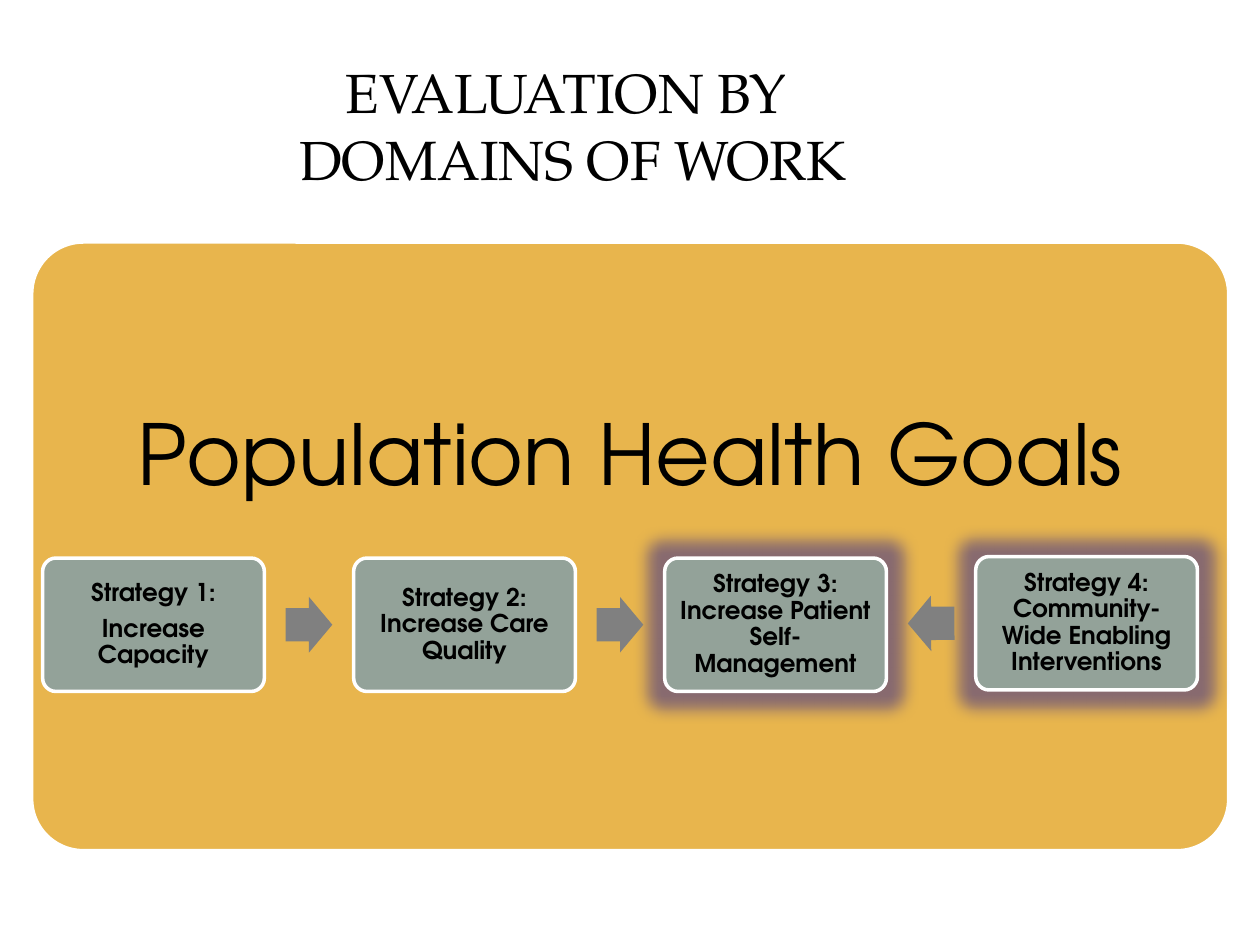
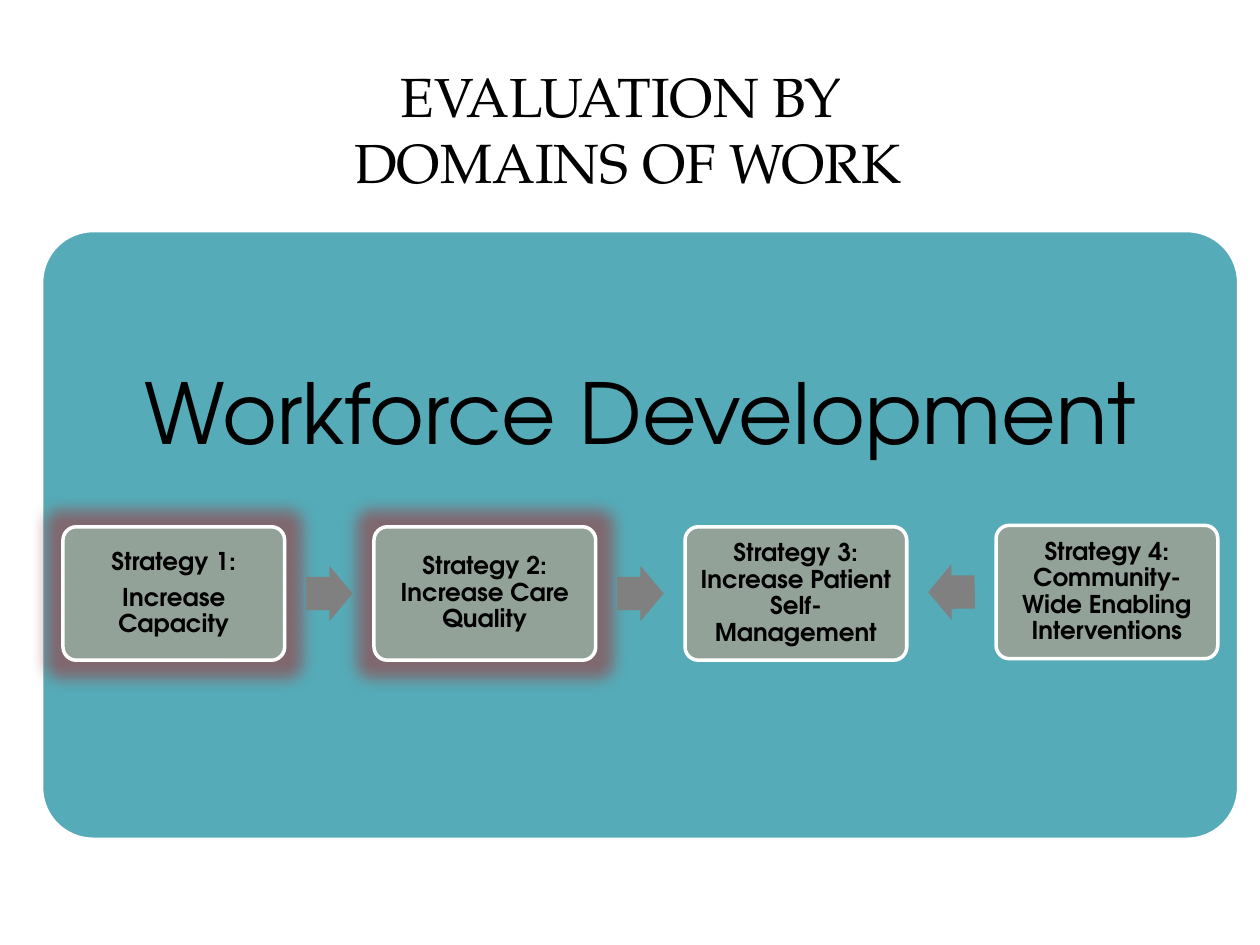
from lxml.etree import SubElement
from pptx import Presentation
from pptx.dml.color import RGBColor
from pptx.enum.shapes import MSO_SHAPE as Shape
from pptx.enum.text import MSO_ANCHOR as Anchor, PP_ALIGN as Align
from pptx.oxml.ns import qn
from pptx.util import Cm, Pt

TITLE = ["EVALUATION BY ", "DOMAINS OF WORK"]
STRATEGIES = [
    ["Strategy 1:", "Increase Capacity"],
    ["Strategy 2: Increase Care Quality"],
    ["Strategy 3: Increase Patient Self-Management"],
    ["Strategy 4: Community-Wide Enabling Interventions"],
]
ARROW_ROTATIONS = [0, 0, 179.7]

# Positions are (left, top) in cm; "glowing" holds strategy indexes.
DOMAINS = [
    dict(name="Population Health Goals", fill="E8B54D", title=(0.08, 1.07),
         panel=(0.64, 4.88), heading_drop=3.45, row=(0.86, 11.25),
         glowing=(2, 3), glow="483987"),
    dict(name="Workforce Development", fill="55ABB8", title=(1.19, 1.14),
         panel=(0.84, 4.65), heading_drop=2.84, row=(1.27, 10.62),
         glowing=(0, 1), glow="9D3C3F"),
]

SERIF, SANS = "TeX Gyre Pagella", "TeX Gyre Adventor"
BLACK, WHITE, SAGE, GRAY = "000000", "FFFFFF", "93A299", "808080"
TITLE_W, TITLE_H = 22.94, 2.9
PANEL_W, PANEL_H = 24.13, 12.27
BOX_W, BOX_H, PITCH = 4.47, 2.69, 6.27
ARROW_W, ARROW_H = 0.94, 1.12
ARROW_DX, ARROW_DY = 4.9, (BOX_H - ARROW_H) / 2
LIFT = 0.03  # the community strategy and its arrow sit slightly higher


def rgb(color):
    return RGBColor.from_string(color)


def style_run(r, font, size, bold=False):
    r.font.name, r.font.size, r.font.bold = font, Pt(size), bold
    r.font.color.rgb = rgb(BLACK)


def prepare_frame(s, inset, anchor):
    tf = s.text_frame
    tf.word_wrap = True
    tf.vertical_anchor = anchor
    tf.margin_left = tf.margin_right = tf.margin_top = tf.margin_bottom = Cm(inset)
    return tf


def add_paragraphs(tf, texts, font, size, bold=False):
    for i, text in enumerate(texts):
        p = tf.add_paragraph() if i else tf.paragraphs[0]
        p.alignment = Align.CENTER
        p.line_spacing = 0.9
        p.space_after = Pt(5.3 if i < len(texts) - 1 else 0)
        r = p.add_run()
        r.text = text
        style_run(r, font, size, bold)


def add_preset(slide, kind, left, top, width, height, fill, adjustments, outlined=True):
    s = slide.shapes.add_shape(kind, Cm(left), Cm(top), Cm(width), Cm(height))
    s.shadow.inherit = False
    s.fill.solid()
    s.fill.fore_color.rgb = rgb(fill)
    for i, value in enumerate(adjustments):
        s.adjustments[i] = value
    if outlined:
        s.line.color.rgb = rgb(WHITE)
        s.line.width = Pt(2)
    else:
        s.line.fill.background()
    return s


def add_glow(s, color):
    effects = s._element.spPr.find(qn("a:effectLst"))
    glow = SubElement(effects, qn("a:glow"), rad=str(Pt(18)))
    clr = SubElement(glow, qn("a:srgbClr"), val=color)
    SubElement(clr, qn("a:alpha"), val="60000")


def add_title(slide, left, top):
    s = slide.shapes.add_textbox(Cm(left), Cm(top), Cm(TITLE_W), Cm(TITLE_H))
    p = prepare_frame(s, 0.13, Anchor.MIDDLE).paragraphs[0]
    p.alignment = Align.CENTER
    for i, line in enumerate(TITLE):
        if i:
            p.add_line_break()
        r = p.add_run()
        r.text = line
        style_run(r, SERIF, 31.5)


def add_panel(slide, domain):
    left, top = domain["panel"]
    add_preset(slide, Shape.ROUNDED_RECTANGLE, left, top, PANEL_W, PANEL_H,
               domain["fill"], [0.085])
    s = slide.shapes.add_textbox(Cm(left), Cm(top + domain["heading_drop"]),
                                 Cm(PANEL_W), Cm(2.2))
    add_paragraphs(prepare_frame(s, 0, Anchor.TOP), [domain["name"]], SANS, 48)


def add_strategies(slide, domain):
    left, top = domain["row"]
    last = len(STRATEGIES) - 1
    for i, texts in enumerate(STRATEGIES):
        x = left + i * PITCH
        y = top - (LIFT if i == last else 0)
        s = add_preset(slide, Shape.ROUNDED_RECTANGLE, x, y, BOX_W, BOX_H, SAGE, [0.1])
        add_paragraphs(prepare_frame(s, 0.23, Anchor.MIDDLE), texts, SANS, 14, True)
        if i in domain["glowing"]:
            add_glow(s, domain["glow"])
    for i, rotation in enumerate(ARROW_ROTATIONS):
        y = top + ARROW_DY - (LIFT if rotation else 0)
        s = add_preset(slide, Shape.RIGHT_ARROW, left + i * PITCH + ARROW_DX, y,
                       ARROW_W, ARROW_H, GRAY, [0.6, 0.5], outlined=False)
        s.rotation = rotation


def main():
    prs = Presentation()
    prs.slide_width, prs.slide_height = Cm(25.4), Cm(19.05)
    for domain in DOMAINS:
        slide = prs.slides.add_slide(prs.slide_layouts[6])
        add_title(slide, *domain["title"])
        add_panel(slide, domain)
        add_strategies(slide, domain)
    prs.save("out.pptx")


if __name__ == "__main__":
    main()
